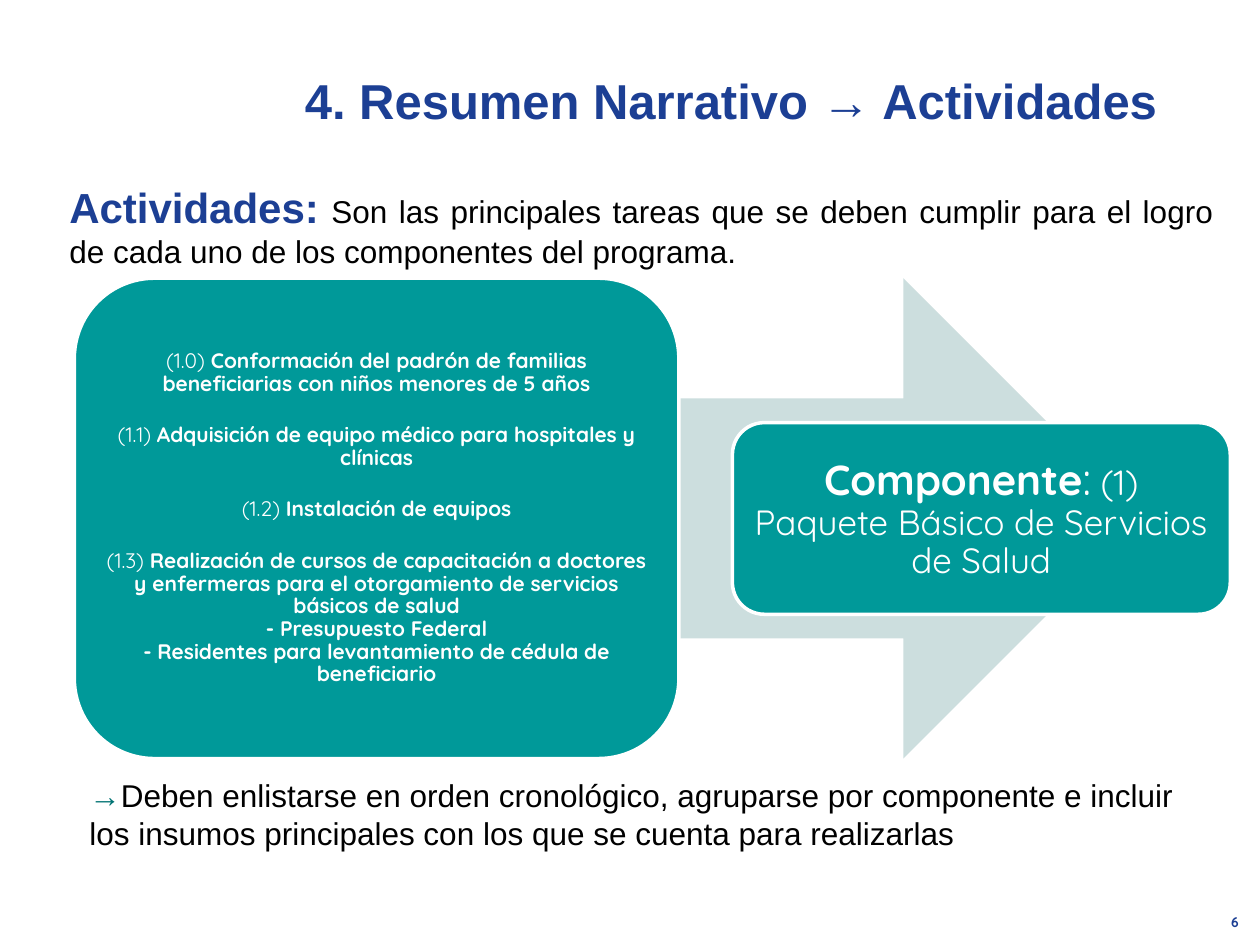
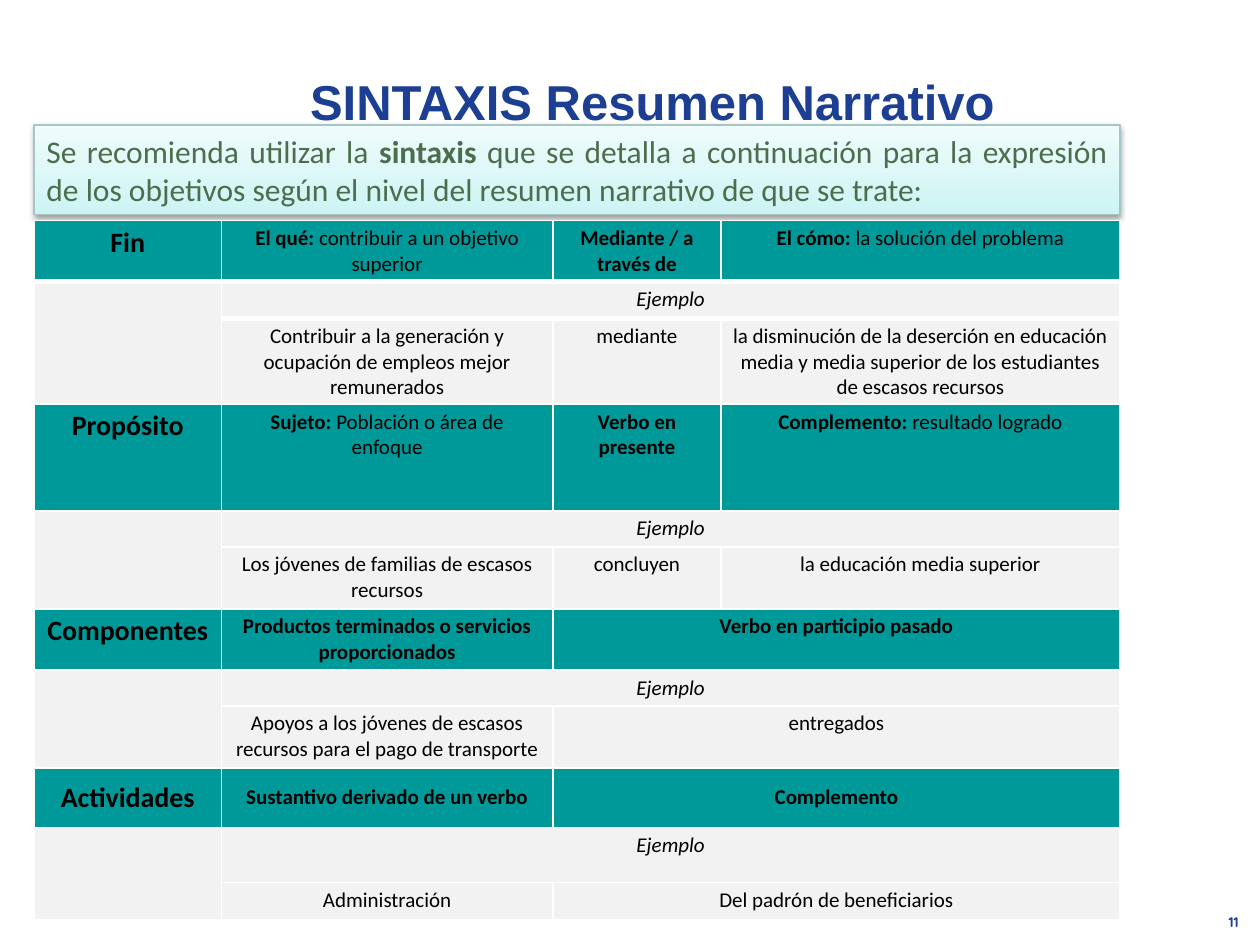
from dataclasses import dataclass
from typing import NamedTuple

from lxml.etree import SubElement
from pptx import Presentation
from pptx.dml.color import RGBColor
from pptx.enum.shapes import MSO_SHAPE as Preset
from pptx.enum.text import MSO_ANCHOR as Anchor, PP_ALIGN as Align
from pptx.oxml.ns import qn
from pptx.util import Pt


class Box(NamedTuple):
    """Left, top, width and height in points."""
    left: float
    top: float
    width: float
    height: float

    def lengths(self):
        """Return the four lengths for python-pptx."""
        return [Pt(value) for value in self]

    def inset(self, margin):
        """Return the box shrunk by a margin on each side."""
        return Box(self.left + margin, self.top + margin,
                   self.width - 2 * margin, self.height - 2 * margin)


@dataclass(frozen=True)
class Theme:
    """Colours, fonts and type sizes of the presentation."""
    navy: str = "1C3F94"
    teal: str = "009999"
    arrow: str = "CCDEDE"
    mark: str = "007373"
    moss: str = "4C6D4E"
    banner_low: str = "CDF3F3"
    banner_high: str = "F0FCFC"
    banner_edge: str = "A5C6C6"
    pale: str = "F2F2F2"
    white: str = "FFFFFF"
    black: str = "000000"
    plain: str = "Arial"
    diagram: str = "Quicksand"
    grid: str = "Calibri"
    title: float = 28
    lead: float = 24
    colon: float = 26
    outcome: float = 20
    body: float = 18
    level: float = 16
    cell: float = 12
    number: float = 8


@dataclass(frozen=True)
class Style:
    """Character format of a run."""
    size: float
    font: str
    color: str
    bold: bool = False
    italic: bool = False


T = Theme()
TITLE = Style(T.title, T.plain, T.navy, True)
NUMBER = Style(T.number, T.diagram, T.navy, True)
BODY = Style(T.body, T.plain, T.black)
LEAD = Style(T.lead, T.plain, T.navy, True)
LEAD_GAP = Style(T.outcome, T.diagram, T.black)
MARK = Style(T.body, T.plain, T.mark)
TASK_CODE = Style(T.cell, T.diagram, T.white)
TASK = Style(T.cell, T.diagram, T.white, True)
OUTCOME_LEAD = Style(T.lead, T.diagram, T.white, True)
OUTCOME_COLON = Style(T.colon, T.diagram, T.white)
OUTCOME = Style(T.outcome, T.diagram, T.white)
ADVICE = Style(T.body, T.grid, T.moss)
ADVICE_BOLD = Style(T.body, T.grid, T.moss, True)
LEVEL = Style(T.level, T.grid, T.black, True)
CELL = Style(T.cell, T.grid, T.black)
CELL_BOLD = Style(T.cell, T.grid, T.black, True)
CELL_ITALIC = Style(T.cell, T.grid, T.black, italic=True)

NUMBER_BOX = Box(683.5, 518.5, 31.5, 16.5)

TASKS = [
    ("(1.0) ", "Conformación del padrón de familias beneficiarias con niños menores de 5 años"),
    ("(1.1) ", "Adquisición de equipo médico para hospitales y clínicas"),
    ("(1.2) ", "Instalación de equipos"),
    ("(1.3) ", "Realización de cursos de capacitación a doctores y enfermeras para el "
               "otorgamiento de servicios básicos de salud\n- Presupuesto Federal\n"
               "- Residentes para levantamiento de cédula de beneficiario"),
]


class Level(NamedTuple):
    """One level of the narrative summary with its syntax and example."""
    name: str
    syntax: list
    example: list
    heights: tuple
    anchor: Anchor = Anchor.TOP


LEVELS = [
    Level("Fin",
          [("El qué: ", "contribuir a un objetivo superior"),
           ("Mediante / a través de", ""),
           ("El cómo: ", "la solución del problema")],
          ["Contribuir a la generación y ocupación de empleos mejor remunerados",
           "mediante",
           "la disminución de la deserción en educación media y media superior "
           "de los estudiantes de escasos recursos"],
          (35, 21, 49)),
    Level("Propósito",
          [("Sujeto: ", "Población o área de enfoque"),
           ("Verbo en presente", ""),
           ("Complemento: ", "resultado logrado")],
          ["Los jóvenes de familias de escasos recursos", "concluyen",
           "la educación media superior"],
          (61, 20.5, 35.5)),
    Level("Componentes",
          [("Productos terminados o servicios proporcionados", ""),
           ("Verbo en participio pasado", "")],
          ["Apoyos a los jóvenes de escasos recursos para el pago de transporte",
           "entregados"],
          (35, 20.5, 35.5)),
    Level("Actividades",
          [("Sustantivo derivado de un verbo", ""), ("Complemento", "")],
          ["Administración", "Del padrón de beneficiarios"],
          (34, 31.5, 21), Anchor.MIDDLE),
]
COLUMNS = (107, 189.5, 96, 228)


def rgb(color):
    """Turn a hex string into a colour."""
    return RGBColor.from_string(color)


def write(paragraph, runs, align=Align.LEFT):
    """Add styled runs to a paragraph, breaking lines at newlines."""
    paragraph.alignment = align
    for text, style in runs:
        for index, line in enumerate(text.split("\n")):
            if index:
                paragraph.add_line_break()
            run = paragraph.add_run()
            run.text = line
            font = run.font
            font.size, font.name = Pt(style.size), style.font
            font.bold, font.italic = style.bold, style.italic
            font.color.rgb = rgb(style.color)


def add_text(slide, box, runs, align=Align.LEFT):
    """Place a wrapped one-paragraph text box."""
    frame = slide.shapes.add_textbox(*box.lengths()).text_frame
    frame.word_wrap = True
    write(frame.paragraphs[0], runs, align)
    return frame


def add_preset(slide, preset, box, fill=None, line=None, width=1):
    """Place a preset shape without shadow."""
    shape = slide.shapes.add_shape(preset, *box.lengths())
    shape.shadow.inherit = False
    if fill:
        shape.fill.solid()
        shape.fill.fore_color.rgb = rgb(fill)
    if line:
        shape.line.color.rgb = rgb(line)
        shape.line.width = Pt(width)
    else:
        shape.line.fill.background()
    return shape


def add_page(deck, title, number, title_box):
    """Add a title-only slide with its title and number."""
    slide = deck.slides.add_slide(deck.slide_layouts[5])
    heading = slide.shapes.title
    heading.left, heading.top, heading.width, heading.height = title_box.lengths()
    heading.text_frame.vertical_anchor = Anchor.TOP
    write(heading.text_frame.paragraphs[0], [(title, TITLE)])
    add_text(slide, NUMBER_BOX, [(number, NUMBER)], Align.RIGHT)
    return slide


def add_card(slide, box, padding, margin, paragraphs, gap=0):
    """Place a teal rounded card with centred paragraphs inside it."""
    add_preset(slide, Preset.ROUNDED_RECTANGLE, box, T.teal, T.white, 2)
    frame = add_text(slide, box.inset(padding), paragraphs[0], Align.CENTER)
    frame.vertical_anchor = Anchor.MIDDLE
    frame.margin_left = frame.margin_right = Pt(margin)
    frame.margin_top = frame.margin_bottom = Pt(margin)
    for runs in paragraphs[1:]:
        paragraph = frame.add_paragraph()
        write(paragraph, runs, Align.CENTER)
        paragraph.space_before = Pt(gap)
    for paragraph in frame.paragraphs:
        paragraph.line_spacing = 0.9


def add_process(slide, box):
    """Place the activities, the arrow and the resulting component."""
    left, top, width, height = box
    add_preset(slide, Preset.RIGHT_ARROW, Box(left + 49.5, top, 561.5, height), T.arrow)
    tasks = [[(code, TASK_CODE), (task, TASK)] for code, task in TASKS]
    add_card(slide, Box(left, top, 345.5, height), 13.4, 3.6, tasks, 16.5)
    outcome = Box(left + width - 284.5, top + (height - 109.5) / 2, 284.5, 109.5)
    add_card(slide, outcome, 5.4, 7.2, [[
        ("Componente", OUTCOME_LEAD), (":", OUTCOME_COLON),
        (" (1) Paquete Básico de Servicios de Salud", OUTCOME)]])


def add_banner(slide, box):
    """Place the shaded recommendation above the table."""
    banner = add_preset(slide, Preset.RECTANGLE, box, line=T.banner_edge, width=0.75)
    banner.fill.gradient()
    banner.fill.gradient_angle = 90
    for stop, color in zip(banner.fill.gradient_stops, (T.banner_low, T.banner_high)):
        stop.color.rgb = rgb(color)
    effects = banner._element.spPr.find(qn("a:effectLst"))
    shadow = SubElement(effects, qn("a:outerShdw"), blurRad=str(Pt(3.1)),
                        dist=str(Pt(1.6)), dir="5400000", rotWithShape="0")
    tint = SubElement(shadow, qn("a:srgbClr"), val=T.black)
    SubElement(tint, qn("a:alpha"), val="38000")
    frame = banner.text_frame
    frame.word_wrap = True
    write(frame.paragraphs[0], [
        ("Se recomienda utilizar la ", ADVICE), ("sintaxis ", ADVICE_BOLD),
        ("que se detalla a continuación para la expresión de los objetivos según "
         "el nivel del resumen narrativo de que se trate:", ADVICE)], Align.JUSTIFY)


def format_cell(cell, fill, runs, anchor, top, bottom):
    """Set the borders, fill, margins and text of a table cell."""
    properties = cell._tc.get_or_add_tcPr()
    for side, width in zip("LRTB", (1, 1, top, bottom)):
        edge = SubElement(properties, qn("a:ln" + side), w=str(Pt(width)))
        SubElement(SubElement(edge, qn("a:solidFill")), qn("a:srgbClr"), val=T.white)
    cell.fill.solid()
    cell.fill.fore_color.rgb = rgb(fill)
    cell.margin_left = cell.margin_right = Pt(6.5)
    cell.margin_top = cell.margin_bottom = Pt(2.9)
    cell.vertical_anchor = anchor
    paragraph = cell.text_frame.paragraphs[0]
    write(paragraph, runs, Align.CENTER)
    if not runs:
        SubElement(paragraph._p, qn("a:endParaRPr"), sz=str(T.cell * 100))


def add_syntax_table(slide, box):
    """Place the syntax table, three rows to a level."""
    heights = [height for level in LEVELS for height in level.heights]
    table = slide.shapes.add_table(len(heights), len(COLUMNS), *box.lengths()).table
    table.first_row = table.horz_banding = False
    for column, width in zip(table.columns, COLUMNS):
        column.width = Pt(width)
    for row, height in zip(table.rows, heights):
        row.height = Pt(height)
    last = len(COLUMNS) - 1
    for index, level in enumerate(LEVELS):
        first = 3 * index
        syntax = [[(text, style) for text, style in zip(part, (CELL_BOLD, CELL)) if text]
                  for part in level.syntax]
        rows = [[[(level.name, LEVEL)], *syntax],
                [[], [("Ejemplo", CELL_ITALIC)]],
                [[], *([(part, CELL)] for part in level.example)]]
        for offset, contents in enumerate(rows):
            row = first + offset
            for column in range(len(COLUMNS)):
                runs = contents[column] if column < len(contents) else []
                thick_bottom = row == 0 or row == 1 and column > 0
                thick_top = row == 1 or row == 2 and column > 0
                format_cell(table.cell(row, column), T.pale if offset else T.teal, runs,
                            Anchor.TOP if offset else level.anchor,
                            3 if thick_top else 1, 3 if thick_bottom else 1)
            if len(contents) <= last:
                table.cell(row, len(contents) - 1).merge(table.cell(row, last))
        table.cell(first + 1, 0).merge(table.cell(first + 2, 0))


def build_activities(deck):
    """Build the slide on activities."""
    slide = add_page(deck, "4. Resumen Narrativo → Actividades", "6",
                     Box(167, 36.5, 546, 41))
    add_text(slide, Box(32.5, 100, 668, 58.5), [
        ("Actividades:", LEAD), (" ", LEAD_GAP),
        ("Son las principales tareas que se deben cumplir para el logro de cada uno "
         "de los componentes del programa.", BODY)], Align.JUSTIFY)
    add_process(slide, Box(42.5, 159, 660.5, 274.5))
    add_text(slide, Box(44, 440, 654, 51), [
        ("→", MARK),
        ("Deben enlistarse en orden cronológico, agruparse por componente e incluir "
         "los insumos principales con los que se cuenta para realizarlas", BODY)])


def build_syntax(deck):
    """Build the slide on the syntax of the summary."""
    slide = add_page(deck, "SINTAXIS Resumen Narrativo", "11", Box(170, 37.5, 546, 41))
    add_banner(slide, Box(19.5, 71.5, 620.5, 51))
    add_syntax_table(slide, Box(19.5, 126, 620.5, 400))


def main():
    """Build and save the presentation."""
    deck = Presentation()
    deck.slide_width, deck.slide_height = Pt(720), Pt(540)
    build_activities(deck)
    build_syntax(deck)
    deck.save("out.pptx")


if __name__ == "__main__":
    main()
